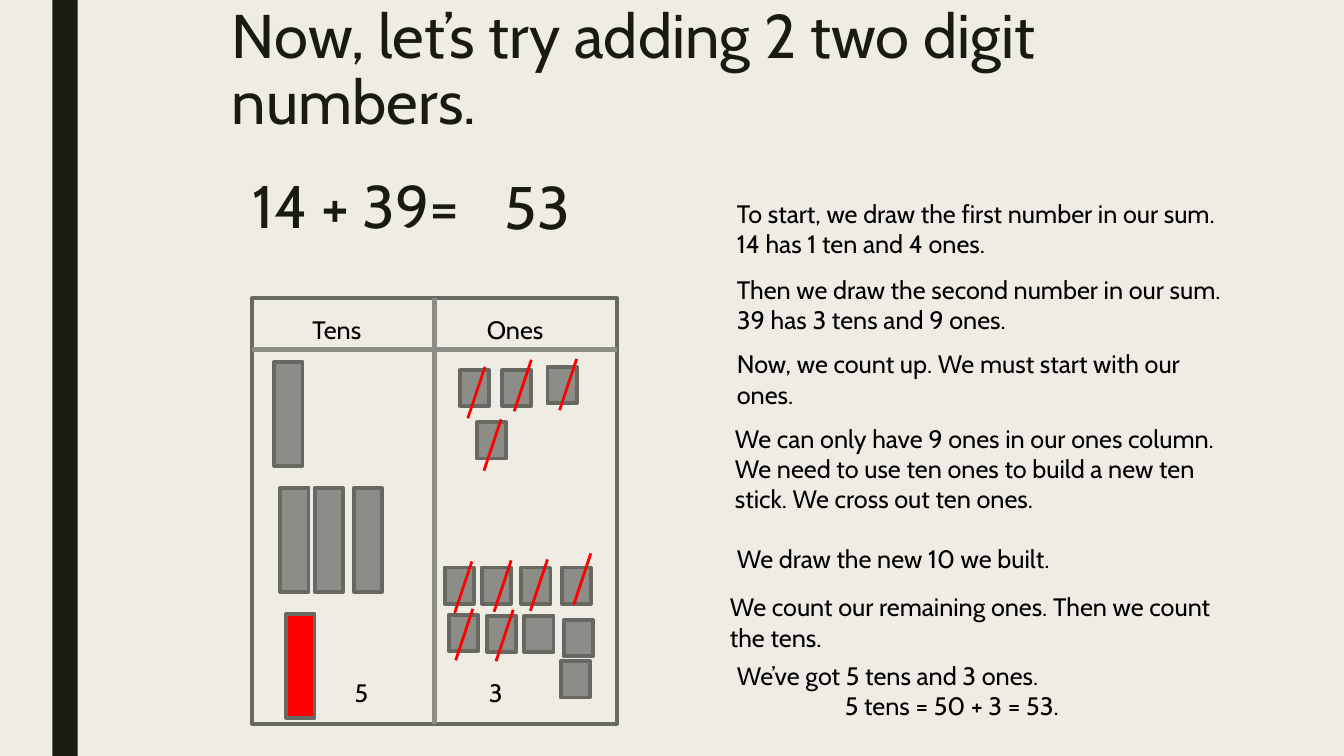
from dataclasses import dataclass

from lxml import etree
from pptx import Presentation
from pptx import util as u
from pptx.dml.color import RGBColor
from pptx.enum import shapes, text
from pptx.oxml.ns import qn


@dataclass(frozen=True)
class Theme:
    font: str = "Cabin"
    background: str = "EFEDE3"
    dark: str = "191B0E"
    body: str = "000000"
    block: str = "8C8D86"
    outline: str = "686863"
    accent: str = "FF0000"
    title_size: float = 44
    sum_size: float = 42.9
    body_size: float = 18
    outline_width: float = 2.75
    divider_width: float = 3.75
    slash_width: float = 2


class SlideBuilder:
    def __init__(self, slide, theme):
        self.slide = slide
        self.theme = theme
        slide.background.fill.solid()
        slide.background.fill.fore_color.rgb = RGBColor.from_string(theme.background)

    def fill_text(self, frame, wording, size, color, spacing=None):
        frame.text = wording
        frame.word_wrap = True
        frame.auto_size = text.MSO_AUTO_SIZE.NONE
        frame.vertical_anchor = text.MSO_ANCHOR.TOP
        for paragraph in frame.paragraphs:
            paragraph.alignment = text.PP_ALIGN.LEFT
            if spacing:
                paragraph.line_spacing = spacing
            for run in paragraph.runs:
                run.font.name = self.theme.font
                run.font.size = u.Pt(size)
                run.font.color.rgb = RGBColor.from_string(color)

    def title(self, wording, left, top, width, height):
        heading = self.slide.shapes.title
        heading.left, heading.top = u.Inches(left), u.Inches(top)
        heading.width, heading.height = u.Inches(width), u.Inches(height)
        self.fill_text(heading.text_frame, wording, self.theme.title_size, self.theme.dark, 0.89)

    def text(self, wording, left, top, width, height, size=None, color=None, spacing=None):
        box = self.slide.shapes.add_textbox(*map(u.Inches, (left, top, width, height)))
        self.fill_text(box.text_frame, wording, size or self.theme.body_size,
                       color or self.theme.body, spacing)
        return box.text_frame

    def rect(self, left, top, width, height, fill=None, outline=None):
        box = self.slide.shapes.add_shape(
            shapes.MSO_SHAPE.RECTANGLE, *map(u.Inches, (left, top, width, height)))
        box.shadow.inherit = False
        if fill:
            box.fill.solid()
            box.fill.fore_color.rgb = RGBColor.from_string(fill)
        else:
            box.fill.background()
        if outline:
            box.line.color.rgb = RGBColor.from_string(outline)
            box.line.width = u.Pt(self.theme.outline_width)
        else:
            box.line.fill.background()

    def line(self, x1, y1, x2, y2, color, width):
        stroke = self.slide.shapes.add_connector(
            shapes.MSO_CONNECTOR.STRAIGHT, *map(u.Inches, (x1, y1, x2, y2)))
        stroke.line.color.rgb = RGBColor.from_string(color)
        stroke.line.width = u.Pt(width)
        etree.SubElement(stroke._element.spPr, qn("a:effectLst"))

    def ten(self, left, top, fill):
        self.rect(left, top, 0.28, 1.03, fill, self.theme.outline)

    def one(self, left, top):
        self.rect(left, top, 0.29, 0.36, self.theme.block, self.theme.outline)

    def slash(self, left, bottom):
        self.line(left, bottom, left + 0.17, bottom - 0.51,
                  self.theme.accent, self.theme.slash_width)


# Place-value chart: outer frame, column split and header rule
CHART_LEFT, CHART_TOP, CHART_WIDTH, CHART_HEIGHT = 2.5, 2.96, 3.62, 4.22
COLUMN_SPLIT, HEADER_RULE = 4.31, 3.47

CHART_LABELS = [("Tens", 3, 3.07), ("Ones", 4.73, 3.07), ("5", 3.42, 6.67), ("3", 4.75, 6.67)]

TENS = [(2.72, 3.59), (2.78, 4.84), (3.12, 4.84), (3.51, 4.84)]
NEW_TEN = (2.84, 6.09)

# Each crossed-out one: its square, then the lower end of its slash
CROSSED_ONES = [
    ((4.56, 3.67), (4.64, 4.15)),
    ((4.98, 3.67), (5.1, 4.08)),
    ((5.43, 3.64), (5.55, 4.07)),
    ((4.73, 4.19), (4.8, 4.67)),
    ((4.41, 5.63), (4.51, 6.08)),
    ((4.78, 5.63), (4.9, 6.07)),
    ((5.17, 5.63), (5.26, 6.06)),
    ((5.57, 5.63), (5.69, 6)),
    ((4.45, 6.1), (4.52, 6.55)),
    ((4.83, 6.11), (4.92, 6.56)),
]
REMAINING_ONES = [(5.2, 6.11), (5.59, 6.15), (5.56, 6.56)]

# Explanation steps: wording, left, top, height
STEPS = [
    ("To start, we draw the first number in our sum.\n14 has 1 ten and 4 ones.", 7.21, 1.92, 0.71),
    ("Then we draw the second number in our sum.\n39 has 3 tens and 9 ones.", 7.21, 2.67, 0.71),
    ("Now, we count up. We must start with our ones.", 7.21, 3.41, 0.71),
    ("We can only have 9 ones in our ones column. We need to use ten ones to build "
     "a new ten stick. We cross out ten ones.", 7.19, 4.15, 1.01),
    ("We draw the new 10 we built.", 7.21, 5.34, 0.4),
    ("We count our remaining ones. Then we count the tens.", 7.14, 5.82, 0.71),
    ("We’ve got 5 tens and 3 ones.\n5 tens = 50 + 3 = 53.", 7.21, 6.5, 0.71),
]


def main():
    theme = Theme()
    deck = Presentation()
    deck.slide_width, deck.slide_height = u.Inches(13.33), u.Inches(7.5)
    page = SlideBuilder(deck.slides.add_slide(deck.slide_layouts[5]), theme)

    # Side bar, title and sum
    page.rect(0.52, 0, 0.25, 7.5, theme.dark)
    page.title("Now, let’s try adding 2 two digit numbers.", 2.2, 0.01, 10.5, 1.62)
    for wording, left, top, width in [("14 + 39=", 2.41, 1.77, 2.5), ("53", 4.91, 1.78, 1.5)]:
        page.text(wording, left, top, width, 0.67, theme.sum_size, theme.dark, 0.79)

    # Chart frame and labels
    page.rect(CHART_LEFT, CHART_TOP, CHART_WIDTH, CHART_HEIGHT, outline=theme.outline)
    page.line(COLUMN_SPLIT, CHART_TOP, COLUMN_SPLIT, CHART_TOP + CHART_HEIGHT,
              theme.block, theme.divider_width)
    page.line(CHART_LEFT, HEADER_RULE, CHART_LEFT + CHART_WIDTH, HEADER_RULE,
              theme.block, theme.divider_width)
    for wording, left, top in CHART_LABELS:
        page.text(wording, left, top, 0.87, 0.4)

    # Tens and ones
    for spot in TENS:
        page.ten(*spot, theme.block)
    page.ten(*NEW_TEN, theme.accent)
    for spot in [square for square, _ in CROSSED_ONES] + REMAINING_ONES:
        page.one(*spot)
    for _, lower_end in CROSSED_ONES:
        page.slash(*lower_end)

    # Explanation, with the closing calculation indented
    for wording, left, top, height in STEPS:
        explanation = page.text(wording, left, top, 5.08, height)
    calculation = explanation.paragraphs[-1]._p.get_or_add_pPr()
    calculation.set("marL", str(u.Inches(1.07)))
    calculation.set("indent", "0")

    deck.save("out.pptx")


if __name__ == "__main__":
    main()
